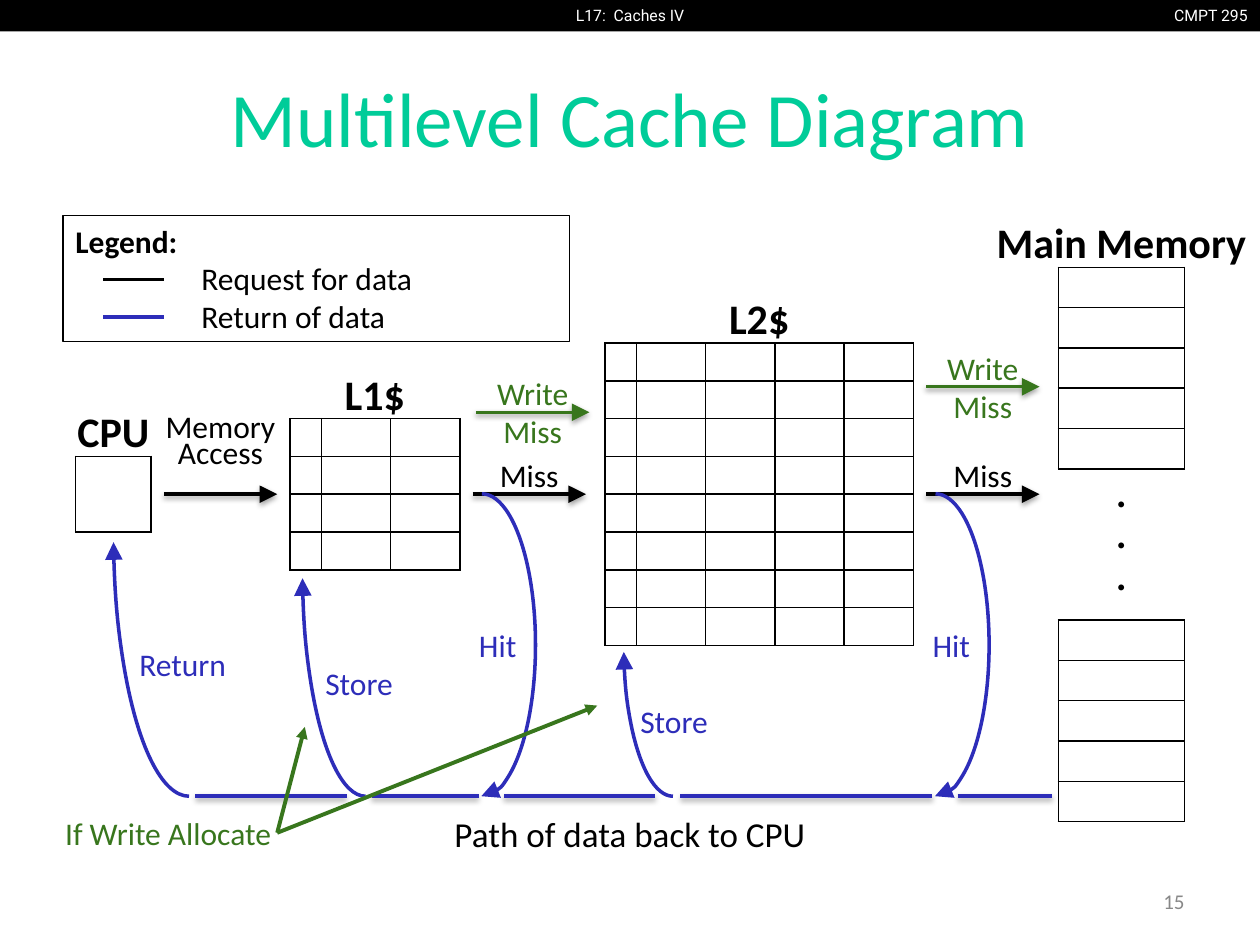
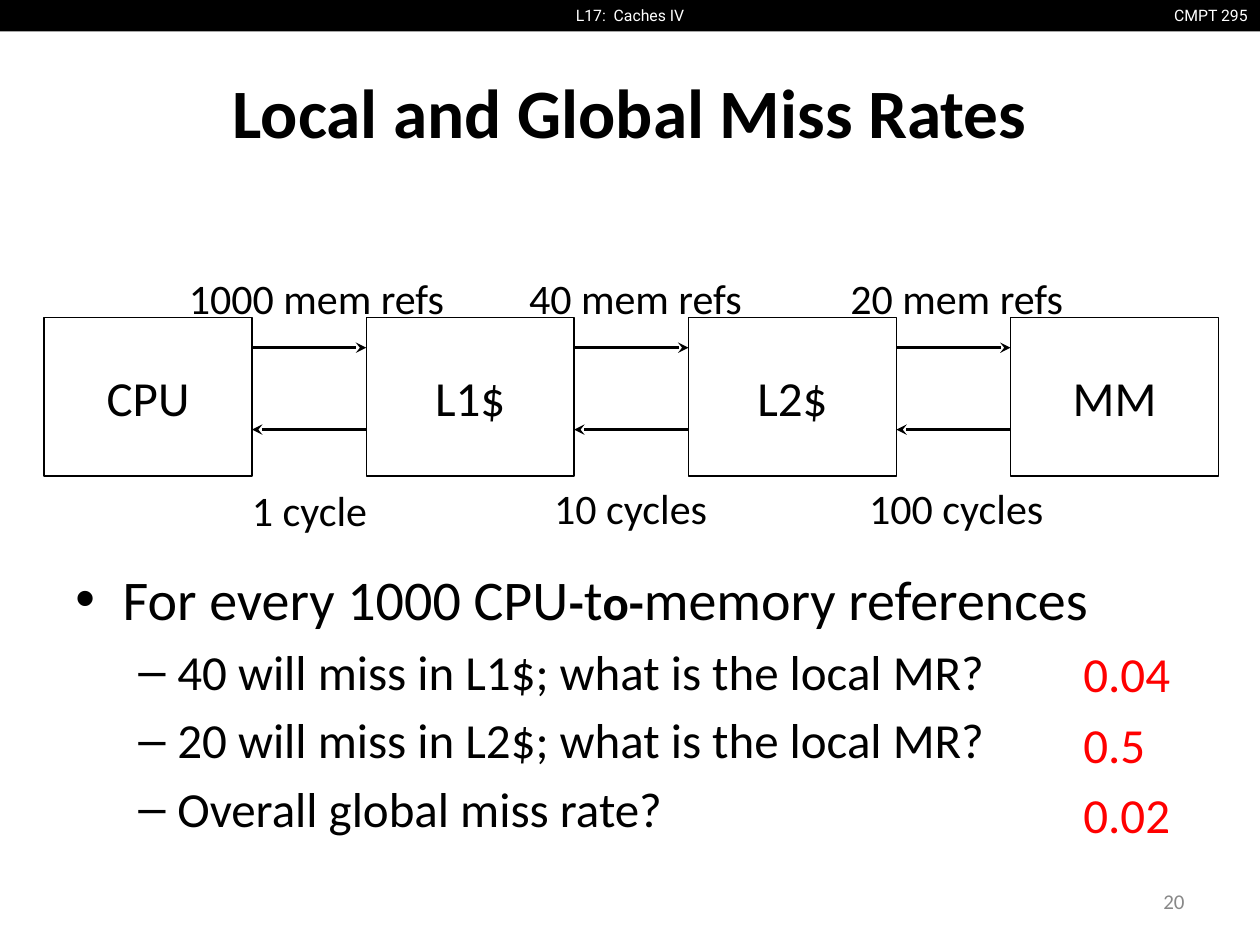
from pptx import Presentation
from pptx.dml.color import RGBColor
from pptx.enum.shapes import MSO_CONNECTOR, MSO_SHAPE
from pptx.enum.text import MSO_ANCHOR, PP_ALIGN
from pptx.oxml import parse_xml
from pptx.oxml.ns import nsdecls
from pptx.util import Pt

BLACK = RGBColor(0x00, 0x00, 0x00)
WHITE = RGBColor(0xFF, 0xFF, 0xFF)
TEAL = RGBColor(0x00, 0xCC, 0x99)
BLUE = RGBColor(0x2D, 0x2D, 0xB9)
GREEN = RGBColor(0x38, 0x76, 0x1D)
RED = RGBColor(0xFF, 0x00, 0x00)
GREY = RGBColor(0x88, 0x88, 0x88)

LEFT, CENTER, RIGHT = PP_ALIGN.LEFT, PP_ALIGN.CENTER, PP_ALIGN.RIGHT
TOP, MIDDLE = MSO_ANCHOR.TOP, MSO_ANCHOR.MIDDLE
RECT, ARC, STRAIGHT = MSO_SHAPE.RECTANGLE, MSO_SHAPE.ARC, MSO_CONNECTOR.STRAIGHT

SLIDE_W, SLIDE_H = 720, 540
HEADER_H = 18
TITLE_ONLY = 5
INSET = 7.2
BASELINE = 455       # height of the path back to the CPU
ARROW_W = 64.8


# ---- Shared helpers ----
def add_run(p, text, size=18, color=BLACK, bold=False, font="Calibri"):
    r = p.add_run()
    r.text = text
    r.font.name, r.font.size, r.font.bold = font, Pt(size), bold
    r.font.color.rgb = color
    return r


def write(sp, text, align=LEFT, anchor=TOP, inset=INSET, wrap=True,
          line_spacing=None, gap=0, **run_format):
    """Fill a shape with text, one paragraph for each line."""
    tf = sp.text_frame
    tf.word_wrap, tf.vertical_anchor = wrap, anchor
    tf.margin_left = tf.margin_right = Pt(inset)
    tf.margin_top = tf.margin_bottom = Pt(3.6)
    for i, line in enumerate(text.split("\n")):
        p = tf.add_paragraph() if i else tf.paragraphs[0]
        p.alignment = align
        if line_spacing:
            p.line_spacing = line_spacing
        p.space_before = Pt(gap if i else 0)
        add_run(p, line, **run_format)
    return sp


def add_text(s, box, text, **fmt):
    return write(s.shapes.add_textbox(*map(Pt, box)), text, **fmt)


def indent(p, margin, hang=0):
    p_pr = p._p.get_or_add_pPr()
    p_pr.set("marL", str(Pt(margin)))
    p_pr.set("indent", str(-Pt(hang)))
    return p_pr


def add_outline(s, kind, box, color=BLACK, width=0.75):
    sp = s.shapes.add_shape(kind, *map(Pt, box))
    sp.shadow.inherit = False
    sp.fill.background()
    sp.line.color.rgb, sp.line.width = color, Pt(width)
    return sp


def add_tail(sp, kind, size="med"):
    ln = sp.line._get_or_add_ln()
    ln.append(parse_xml(f'<a:tailEnd {nsdecls("a")} type="{kind}" '
                        f'w="{size}" len="{size}"/>'))


def add_line(s, start, end, color=BLACK, width=2, tail=None, tail_size="med",
             shadow=False):
    line = s.shapes.add_connector(STRAIGHT, *map(Pt, (*start, *end)))
    line.line.color.rgb, line.line.width = color, Pt(width)
    if tail:
        add_tail(line, tail, tail_size)
    effects = parse_xml(f'<a:effectLst {nsdecls("a")}/>')
    if shadow:
        effects.append(parse_xml(
            f'<a:outerShdw {nsdecls("a")} blurRad="{Pt(3.1)}" dist="{Pt(1.6)}" '
            'dir="5400000" rotWithShape="0"><a:srgbClr val="000000">'
            '<a:alpha val="37000"/></a:srgbClr></a:outerShdw>'))
    line._element.spPr.append(effects)


def new_slide(prs, title, number, **title_format):
    s = prs.slides.add_slide(prs.slide_layouts[TITLE_ONLY])
    # Header band
    band = add_outline(s, RECT, (0, 0, SLIDE_W, HEADER_H))
    band.fill.solid()
    band.fill.fore_color.rgb = BLACK
    band.line.fill.background()
    header = dict(size=9, color=WHITE, font="Roboto", wrap=False)
    add_text(s, (661.7, 0, 58.3, HEADER_H), "CMPT 295", align=RIGHT, **header)
    add_text(s, (312, 0, 96, HEADER_H), "L17:  Caches IV", align=CENTER, **header)
    # Title and page number
    sp = s.shapes.title
    sp.left, sp.top, sp.width, sp.height = map(Pt, (36, 21.6, 648, 90))
    write(sp, title, align=CENTER, anchor=MIDDLE, **title_format)
    add_text(s, (516, 500.4, 168, 28.8), number, size=12, color=GREY,
             align=RIGHT, anchor=MIDDLE)
    return s


# ---- Multilevel cache diagram ----
def border_cell(cell):
    cell.fill.background()
    cell.margin_left = cell.margin_right = cell.margin_top = cell.margin_bottom = 0
    cell.text_frame.paragraphs[0]._p.get_or_add_endParaRPr().set("sz", "800")
    tc_pr = cell._tc.get_or_add_tcPr()
    for i, side in enumerate(("lnL", "lnR", "lnT", "lnB")):
        tc_pr.insert(i, parse_xml(
            f'<a:{side} {nsdecls("a")} w="{Pt(1)}"><a:solidFill>'
            f'<a:srgbClr val="{BLACK}"/></a:solidFill></a:{side}>'))


def memory_grid(s, left, top, widths, rows, row_h, name=None, name_w=None):
    """A grid of memory cells with its name centred above it."""
    w = sum(widths)
    frame = s.shapes.add_table(rows, len(widths), *map(Pt, (left, top, w, rows * row_h)))
    table = frame.table
    for column, width in zip(table.columns, widths):
        column.width = Pt(width)
    for row in table.rows:
        row.height = Pt(row_h)
        for cell in row.cells:
            border_cell(cell)
    if name:
        name_w = name_w or w
        add_text(s, (left + (w - name_w) / 2, top - 32.4, name_w, 36), name,
                 size=24, bold=True, align=CENTER, inset=0)


def request(s, left, y, text, color=BLACK, rise=25.2, line_spacing=None):
    """A request arrow at height y, with its label starting above it."""
    add_text(s, (left, y - rise, ARROW_W, 28.8), text, color=color,
             align=CENTER, inset=0, line_spacing=line_spacing)
    add_line(s, (left, y), (left + ARROW_W, y), color, tail="triangle",
             tail_size="lg", shadow=True)


def return_arc(s, box, text, label_box, end, rotation=0):
    """A curved data path; label_box is relative to the arc's corner."""
    sp = add_outline(s, ARC, box, BLUE, 2)
    sp.adjustments[0], sp.adjustments[1] = 162, end
    sp.rotation = rotation
    add_tail(sp, "triangle", "lg")
    dx, dy, w = label_box
    add_text(s, (box[0] + dx, box[1] + dy, w, 28.8), text, color=BLUE,
             align=CENTER, inset=0)


def hit(s, left, top):
    return_arc(s, (left, top, 61.2, BASELINE - top), "Hit", (21.6, 72, 36), 54.13)


def climb(s, left, top, width, text, label_box):
    return_arc(s, (left, top, width, BASELINE - top), text, label_box, 211.22, 180)


def legend(s, left, top):
    sp = add_outline(s, RECT, (left, top, 289.4, 72))
    write(sp, "Legend:\nRequest for data\nReturn of data")
    heading, *entries = sp.text_frame.paragraphs
    heading.runs[0].font.bold = True
    for i, (p, color) in enumerate(zip(entries, (BLACK, BLUE))):
        indent(p, 72)
        y = top + 36.5 + i * 21.6
        add_line(s, (left + 23, y), (left + 57.6, y), color)


def cache_slide(prs):
    s = new_slide(prs, "Multilevel Cache Diagram", "15", size=44, color=TEAL)
    # Memories
    memory_grid(s, 43.2, 260.8, [43.2], 1, 43.2, "CPU")
    memory_grid(s, 165.6, 239.2, [18] + [39.6] * 2, 4, 21.6, "L1$")
    memory_grid(s, 345.6, 196, [18] + [39.6] * 4, 8, 21.6, "L2$")
    memory_grid(s, 604.8, 152.8, [72], 5, 23.04, "Main Memory", 158.4)
    memory_grid(s, 604.8, 354.4, [72], 5, 23.04)
    add_text(s, (633.6, 267.8, 14.4, 80), ".\n.\n.", size=28, align=CENTER,
             inset=0, line_spacing=0.7)
    # Requests
    request(s, 93.6, 282.4, "Memory\nAccess", rise=47.5, line_spacing=0.7)
    request(s, 270, 282.4, "Miss")
    request(s, 529.2, 282.4, "Miss")
    request(s, 272, 235.6, "Write Miss", GREEN)
    request(s, 529.2, 221, "Write Miss", GREEN)
    # Path of data back to the CPU
    for x1, x2 in ((111.6, 198), (212.4, 273.6), (288, 374.4),
                   (388.8, 532.8), (547.2, 601.2)):
        add_line(s, (x1, BASELINE), (x2, BASELINE), BLUE, shadow=True)
    hit(s, 244.8, 282.2)
    hit(s, 504, 282.2)
    climb(s, 64.8, 152.6, 86.4, "Return", (10.8, 212.4, 57.6))
    climb(s, 172.8, 195.8, 72, "Store", (7.2, 180, 50.4))
    climb(s, 356.4, 282.2, 56.2, "Store", (3.6, 115.2, 50.4))
    add_text(s, (0, 460.8, SLIDE_W, 31.7), "Path of data back to CPU", size=20,
             align=CENTER)
    # Write allocate
    add_text(s, (33.8, 461.5, 124.6, 28.8), "If Write Allocate", color=GREEN,
             align=CENTER, inset=0)
    for target in ((174.2, 415.4), (341.3, 403.2)):
        add_line(s, (158.4, 475.9), target, GREEN, 2.25, "triangle")
    legend(s, 36, 123.1)


# ---- Local and global miss rates ----
def hierarchy(s, left, top):
    """Four levels in a row, with requests out and answers back."""
    w, h, pitch = 118.8, 90.7, 184.1
    for i, name in enumerate(("CPU", "L1$", "L2$", "MM")):
        x = left + i * pitch
        write(add_outline(s, RECT, (x, top, w, h)), name, size=28,
              align=CENTER, anchor=MIDDLE)
        if i < 3:
            near, far = x + w, x + pitch
            add_line(s, (near, top + 17.3), (far, top + 17.3), tail="stealth")
            add_line(s, (far, top + 64.1), (near, top + 64.1), tail="stealth")
    labels = ((75.6, -29.5, "1000 mem refs"), (270, -29.5, "40 mem refs"),
              (453.6, -29.5, "20 mem refs"), (111.6, 92.2, "1 cycle"),
              (284.4, 90.7, "10 cycles"), (464.4, 90.7, "100 cycles"))
    for dx, dy, text in labels:
        add_text(s, (left + dx, top + dy, 162, 36), text, size=24)


def add_bullet(p, mark, margin, hang):
    p_pr = indent(p, margin, hang)
    p_pr.append(parse_xml(f'<a:buFont {nsdecls("a")} typeface="Arial"/>'))
    p_pr.append(parse_xml(f'<a:buChar {nsdecls("a")} char="{mark}"/>'))


def questions(s, left, top):
    sp = add_text(s, (left, top, 648, 200), "For every 1000 CPU\n"
                  "40 will miss in L1$; what is the local MR?\n"
                  "20 will miss in L2$; what is the local MR?\n"
                  "Overall global miss rate?", size=28, gap=5.6)
    first, *others = sp.text_frame.paragraphs
    first.runs[0].font.size = Pt(32)
    for text, small in (("-", True), ("t", False), ("o-", True),
                        ("memory references", False)):
        add_run(first, text, size=28 if small else 32, bold=small)
    add_bullet(first, "•", 27, 27)
    for p in others:
        p.level = 1
        add_bullet(p, "–", 58.3, 22.3)
    add_text(s, (left + 576, top + 45.4, 64.8, 123), "0.04\n0.5\n0.02",
             size=28, color=RED, gap=6.7)


def miss_rate_slide(prs):
    s = new_slide(prs, "Local and Global Miss Rates", "20", size=39.6,
                  bold=True, line_spacing=0.9)
    hierarchy(s, 25.2, 181.4)
    questions(s, 36, 318.8)


def main():
    prs = Presentation()
    prs.slide_width, prs.slide_height = Pt(SLIDE_W), Pt(SLIDE_H)
    cache_slide(prs)
    miss_rate_slide(prs)
    prs.save("out.pptx")


if __name__ == "__main__":
    main()
